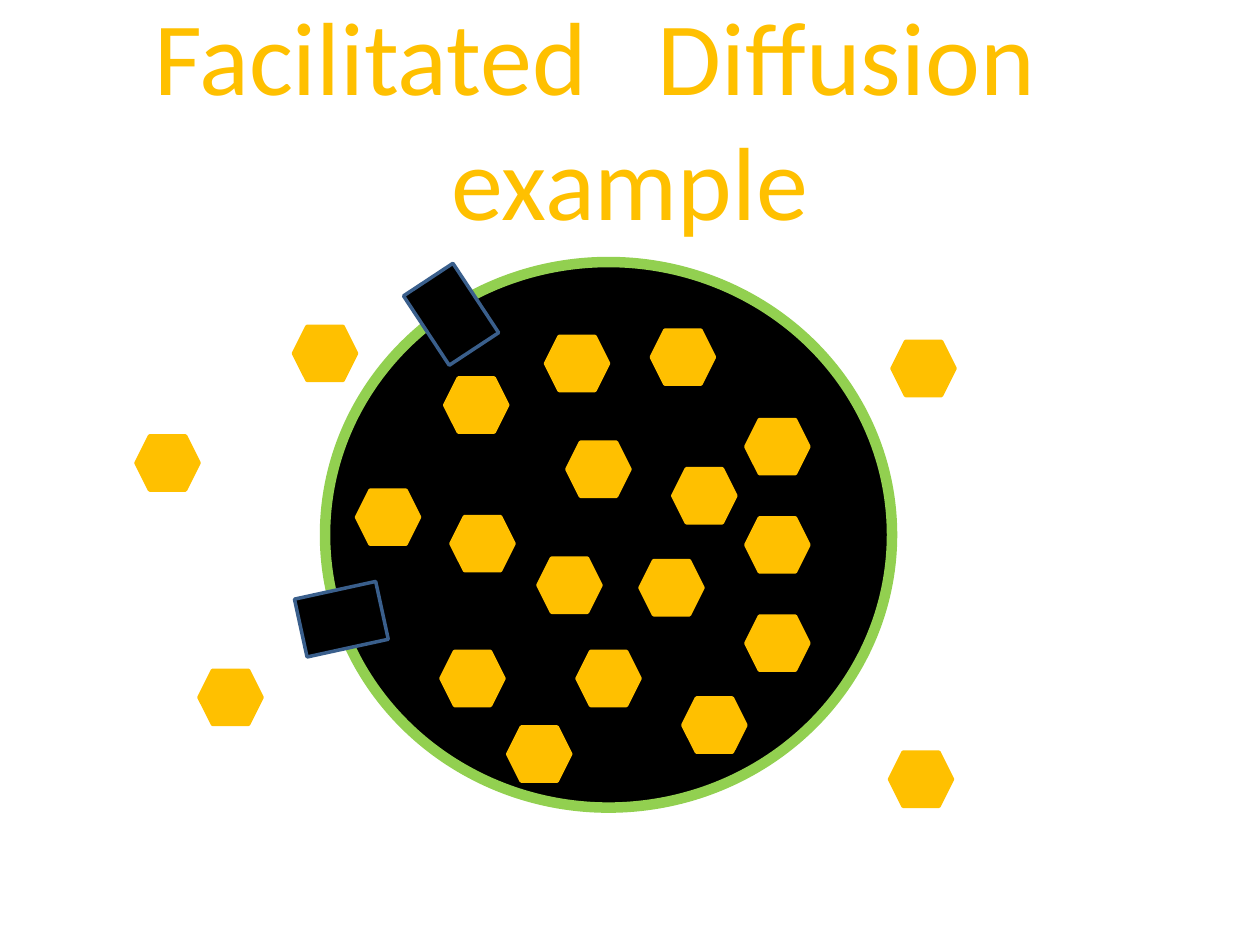
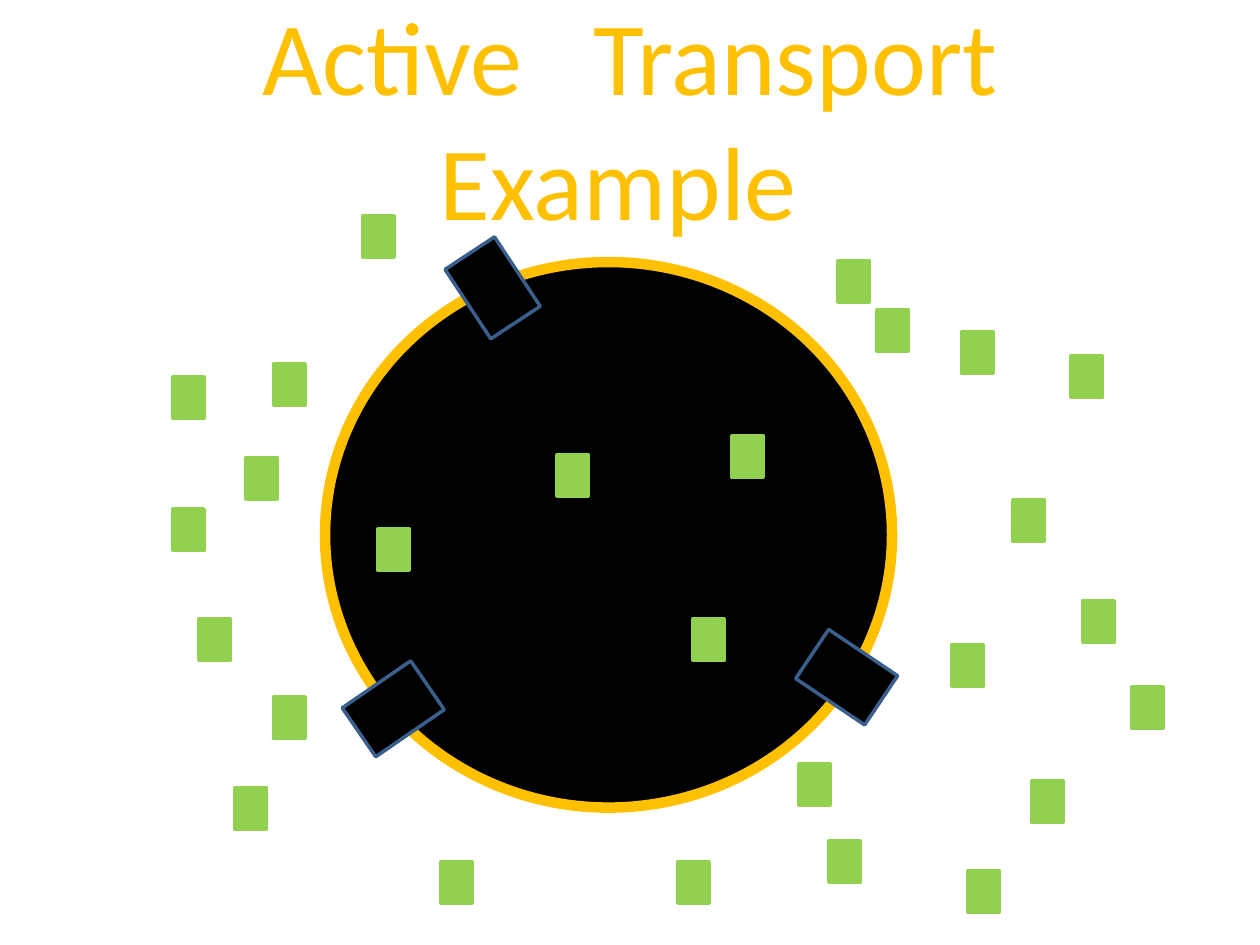
from pptx import Presentation
from pptx.dml.color import RGBColor
from pptx.enum.shapes import MSO_SHAPE
from pptx.enum.text import MSO_ANCHOR, MSO_AUTO_SIZE, PP_ALIGN
from pptx.util import Emu, Pt

PX = 9144
COLORS = {"gold": "FFC000", "green": "92D050", "black": "000000", "blue": "3A5F8C"}
TITLE_BOX = (50, 30, 900, 125)
CELL_BOX = (258, 208, 450, 433)
HEXAGON_SIZE = (50, 43)
SQUARE_SIZE = (25, 33)
PROTEIN_SIZE = (66, 47)
GAP_SPACING = "2700"


class Deck:
    def __init__(self):
        self.presentation = Presentation()
        self.presentation.slide_width = Emu(1000 * PX)
        self.presentation.slide_height = Emu(750 * PX)
        self.slide = None

    def color(self, name):
        return RGBColor.from_string(COLORS[name])

    def add_slide(self):
        layout = self.presentation.slide_layouts[5]
        self.slide = self.presentation.slides.add_slide(layout)

    def add_title(self, *lines):
        title = self.slide.shapes.title
        title.left, title.top, title.width, title.height = (
            Emu(value * PX) for value in TITLE_BOX
        )
        frame = title.text_frame
        frame.word_wrap = True
        frame.auto_size = MSO_AUTO_SIZE.NONE
        frame.vertical_anchor = MSO_ANCHOR.MIDDLE
        paragraph = frame.paragraphs[0]
        paragraph.alignment = PP_ALIGN.CENTER
        paragraph.font.name = "Calibri"
        paragraph.font.size = Pt(59.4)
        paragraph.font.color.rgb = self.color("gold")
        for index, words in enumerate(lines):
            if index:
                paragraph.add_line_break()
            for position, word in enumerate(words):
                if position:
                    self.add_wide_gap(paragraph)
                if word:
                    paragraph.add_run().text = word

    def add_wide_gap(self, paragraph):
        run = paragraph.add_run()
        run.text = " "
        run._r.get_or_add_rPr().set("spc", GAP_SPACING)

    def add_shape(self, kind, box, fill, line, line_width=2, rotation=0):
        shape = self.slide.shapes.add_shape(kind, *(Emu(value * PX) for value in box))
        shape.shadow.inherit = False
        shape.fill.solid()
        shape.fill.fore_color.rgb = self.color(fill)
        shape.line.color.rgb = self.color(line)
        shape.line.width = Pt(line_width)
        shape.rotation = rotation

    def add_cell(self, membrane):
        self.add_shape(MSO_SHAPE.OVAL, CELL_BOX, "black", membrane, 6)

    def add_molecules(self, kind, size, color, positions):
        for position in positions:
            self.add_shape(kind, position + size, color, color)

    def add_proteins(self, placements):
        for left, top, rotation in placements:
            box = (left, top) + PROTEIN_SIZE
            self.add_shape(MSO_SHAPE.RECTANGLE, box, "black", "blue", rotation=rotation)


def build_facilitated_diffusion(deck):
    inside = [
        (433, 267), (450, 351), (517, 262), (508, 445), (592, 333), (592, 489),
        (458, 517), (358, 410), (427, 443), (534, 372), (283, 389), (592, 411),
        (350, 517), (353, 300), (403, 577), (542, 554),
    ]
    outside = [(108, 346), (233, 259), (706, 597), (158, 532), (708, 271)]
    deck.add_slide()
    deck.add_title(("Facilitated", "Diffusion", ""), ("example",))
    deck.add_cell("green")
    deck.add_molecules(MSO_SHAPE.HEXAGON, HEXAGON_SIZE, "gold", inside + outside)
    deck.add_proteins([(325, 226, 56.6), (238, 468, 347.7)])


def build_active_transport(deck):
    inside = [(581, 346), (442, 361), (300, 420), (550, 491)]
    outside = [
        (658, 667), (819, 620), (538, 684), (634, 606), (350, 684), (158, 491),
        (768, 691), (898, 545), (763, 263), (186, 625), (195, 363), (137, 299),
        (850, 282), (696, 246), (859, 477), (288, 171), (137, 404), (665, 207),
        (804, 397), (755, 512), (217, 553), (217, 289),
    ]
    deck.add_slide()
    deck.add_title(("Active", "Transport"), ("Example ",))
    deck.add_cell("gold")
    deck.add_molecules(MSO_SHAPE.RECTANGLE, SQUARE_SIZE, "green", inside + outside)
    deck.add_proteins([(358, 205, 56.6), (639, 514, 33.9), (279, 539, 145.5)])


def main():
    deck = Deck()
    build_facilitated_diffusion(deck)
    build_active_transport(deck)
    deck.presentation.save("out.pptx")


if __name__ == "__main__":
    main()
